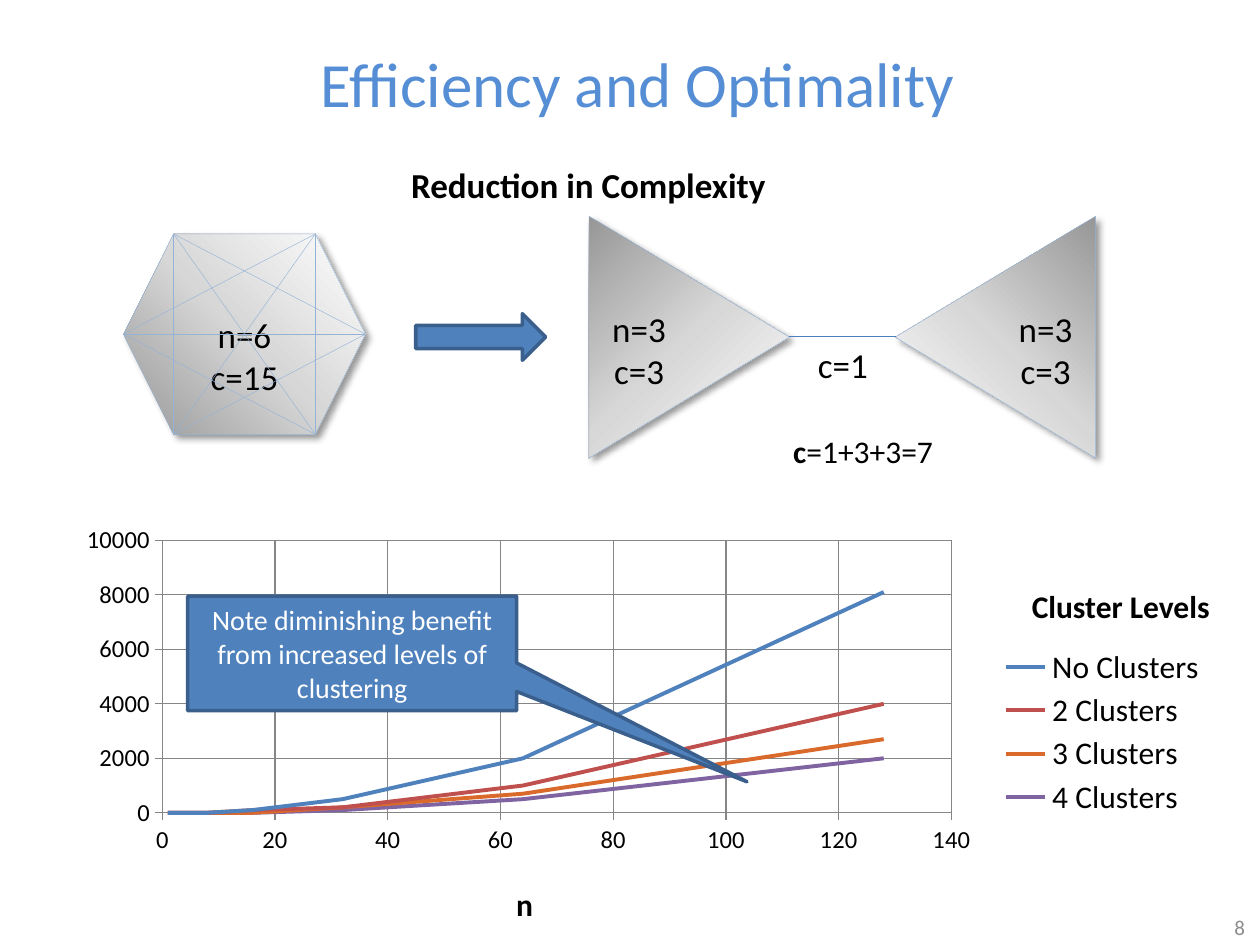
from copy import deepcopy
from dataclasses import dataclass
from itertools import combinations

from lxml import etree
from pptx import Presentation
from pptx.chart.data import XyChartData
from pptx.dml.color import RGBColor
from pptx.enum import chart as ch, shapes, text
from pptx.oxml.ns import qn
from pptx.util import Pt

MSO = shapes.MSO_SHAPE
ALIGN = text.PP_ALIGN
ANCHOR = text.MSO_ANCHOR


@dataclass(frozen=True)
class Theme:
    font: str = "Calibri"
    title: str = "558ED5"
    ink: str = "000000"
    paper: str = "FFFFFF"
    muted: str = "8C8C8C"
    accent: str = "4F81BD"
    accent_edge: str = "3A5F8C"
    link: str = "4B7EBC"
    mesh: str = "95B3D7"
    grid: str = "868686"
    series: tuple = ("4F81BD", "C0504D", "D96A2C", "8064A2")
    shade: tuple = ((0, "979797"), (0.5, "D7D7D7"), (1, "FFFFFF"))
    sz_title: int = 36
    sz_large: int = 20
    sz_body: int = 18
    sz_note: int = 16
    sz_tick: int = 14
    sz_number: int = 12


def rgb(code):
    return RGBColor.from_string(code)


def place(parent, index, inner=False, **fractions):
    """Set a manual layout, in fractions of the chart, on a chart part."""
    old = parent.find(qn("c:layout"))
    if old is not None:
        parent.remove(old)
    layout = etree.Element(qn("c:layout"))
    manual = etree.SubElement(layout, qn("c:manualLayout"))
    values = {"layoutTarget": "inner"} if inner else {}
    values.update(xMode="edge", yMode="edge", **fractions)
    for tag, value in values.items():
        etree.SubElement(manual, qn("c:" + tag)).set("val", str(value))
    parent.insert(index, layout)


class Deck:
    def __init__(self, theme, width, height):
        self.t = theme
        self.prs = Presentation()
        self.prs.slide_width, self.prs.slide_height = Pt(width), Pt(height)
        self.s = self.prs.slides.add_slide(self.prs.slide_layouts[6])

    def style(self, font, size, color, bold=False):
        font.name, font.size, font.bold = self.t.font, Pt(size), bold
        font.color.rgb = rgb(color)

    def set_text(self, tf, lines, size, color, bold, align, anchor):
        tf.vertical_anchor = anchor
        for i, line in enumerate(lines):
            p = tf.add_paragraph() if i else tf.paragraphs[0]
            p.text, p.alignment = line, align
            self.style(p.font, size, color, bold)

    def label(self, box, line, size, color=None, bold=False,
              align=ALIGN.CENTER, anchor=ANCHOR.TOP):
        tf = self.s.shapes.add_textbox(*map(Pt, box)).text_frame
        tf.word_wrap = False
        self.set_text(tf, [line], size, color or self.t.ink, bold, align, anchor)
        return tf

    def block(self, kind, box, fill, edge, weight, lines=(), size=18,
              color=None, anchor=ANCHOR.MIDDLE):
        sp = self.s.shapes.add_shape(kind, *map(Pt, box))
        sp.shadow.inherit = False
        if fill:
            sp.fill.solid()
            sp.fill.fore_color.rgb = rgb(fill)
        sp.line.color.rgb, sp.line.width = rgb(edge), Pt(weight)
        sp.text_frame.word_wrap = True
        self.set_text(sp.text_frame, lines, size, color or self.t.ink, False,
                      ALIGN.CENTER, anchor)
        return sp

    def graph(self, kind, box, lines, rotation=0, vert=None, flip=False):
        """A shaded polygon with a soft shadow, standing for a full graph."""
        sp = self.block(kind, box, None, self.t.mesh, 0.25, lines,
                        self.t.sz_large, anchor=ANCHOR.BOTTOM)
        sp.rotation = rotation
        pr = sp._element.spPr
        if flip:
            pr.find(qn("a:xfrm")).set("flipH", "1")
        if vert:
            sp.text_frame._txBody.find(qn("a:bodyPr")).set("vert", vert)
        sp.fill.gradient()
        sp.fill.gradient_angle = 45
        stops = pr.find(".//" + qn("a:gsLst"))
        stops.append(deepcopy(stops[0]))
        for stop, (position, color) in zip(sp.fill.gradient_stops, self.t.shade):
            stop.position, stop.color.rgb = position, rgb(color)
        shadow = etree.SubElement(
            pr.find(qn("a:effectLst")), qn("a:outerShdw"), blurRad=str(Pt(4)),
            dist=str(Pt(3)), dir="2700000", algn="tl", rotWithShape="0")
        black = etree.SubElement(shadow, qn("a:srgbClr"), val=self.t.ink)
        etree.SubElement(black, qn("a:alpha"), val="40000")

    def line(self, start, end, color, weight):
        c = self.s.shapes.add_connector(
            shapes.MSO_CONNECTOR.STRAIGHT, *map(Pt, (*start, *end)))
        c.line.color.rgb, c.line.width = rgb(color), Pt(weight)
        etree.SubElement(c._element.spPr, qn("a:effectLst"))

    def axis(self, axis, top, step):
        axis.minimum_scale, axis.maximum_scale, axis.major_unit = 0, top, step
        axis.has_major_gridlines = True
        axis.major_tick_mark = ch.XL_TICK_MARK.OUTSIDE
        axis.minor_tick_mark = ch.XL_TICK_MARK.NONE
        for ln in (axis.format.line, axis.major_gridlines.format.line):
            ln.color.rgb, ln.width = rgb(self.t.grid), Pt(0.75)
        self.style(axis.tick_labels.font, self.t.sz_tick, self.t.ink)

    def curves(self, box, xs, series):
        data = XyChartData(number_format="General")
        for name, ys in series.items():
            entry = data.add_series(name)
            for x, y in zip(xs, ys):
                entry.add_data_point(x, y)
        chart = self.s.shapes.add_chart(
            ch.XL_CHART_TYPE.XY_SCATTER_SMOOTH_NO_MARKERS,
            *map(Pt, box), data).chart
        chart.has_title = False
        self.style(chart.font, self.t.sz_body, self.t.ink)
        chart.plots[0].vary_by_categories = False
        for ser, color in zip(chart.plots[0].series, self.t.series):
            ser.smooth = True
            ser.marker.style = ch.XL_MARKER_STYLE.NONE
            ser.format.line.color.rgb = rgb(color)
            ser.format.line.width = Pt(2.25)
        # Axes and the title of the horizontal one
        self.axis(chart.category_axis, 140, 20)
        self.axis(chart.value_axis, 10000, 2000)
        title = chart.category_axis.axis_title
        title.text_frame.text = "n"
        self.style(title.text_frame.paragraphs[0].font, self.t.sz_body,
                   self.t.ink, True)
        place(title._element, 1, x=0.39, y=0.84)
        # Legend and plot area
        chart.has_legend = True
        legend = chart.legend
        legend.position = ch.XL_LEGEND_POSITION.RIGHT
        legend.include_in_layout = False
        self.style(legend.font, self.t.sz_body, self.t.ink)
        place(legend._element, 1, x=0.81, y=0.29, w=0.18, h=0.42)
        plot_area = chart._chartSpace.find(".//" + qn("c:plotArea"))
        place(plot_area, 0, inner=True, x=0.09, y=0.05, w=0.68, h=0.64)


def main():
    t = Theme()
    d = Deck(t, 720, 540)

    # Title and slide number
    d.label((40.3, 10.8, 648, 72), "Efficiency and Optimality", t.sz_title,
            t.title, anchor=ANCHOR.MIDDLE)
    d.label((688.3, 520.5, 30.2, 18), "8", t.sz_number, t.muted,
            align=ALIGN.RIGHT, anchor=ANCHOR.MIDDLE)

    # Connections by number of nodes
    d.curves((33.1, 296.6, 663.1, 243.4), (1, 2, 3, 4, 5, 6, 8, 16, 32, 64, 128), {
        "No Clusters": [0] * 7 + [100, 500, 2000, 8100],
        "2 Clusters": [0] * 7 + [100, 200, 1000, 4000],
        "3 Clusters": [0] * 7 + [0, 200, 700, 2700],
        "4 Clusters": [0] * 7 + [0, 100, 500, 2000],
    })

    # Six nodes, with every diagonal of the hexagon
    x, y, w, h = 70.6, 133.7, 138.2, 114.5
    d.graph(MSO.HEXAGON, (x, y, w, h), ["n=6", "c=15"])
    inset = h / 4
    corners = [(x, y + h / 2), (x + inset, y), (x + w - inset, y),
               (x + w, y + h / 2), (x + w - inset, y + h), (x + inset, y + h)]
    for i, j in combinations(range(6), 2):
        if j - i not in (1, 5):
            d.line(corners[i], corners[j], t.mesh, 0.25)

    # Two linked clusters of three nodes
    d.block(MSO.RIGHT_ARROW, (237.6, 179.3, 74.2, 26.6), t.accent,
            t.accent_edge, 2)
    for left, rotation, vert, flip in ((324.7, 90, "vert270", False),
                                       (499.7, 270, "vert", True)):
        d.graph(MSO.ISOSCELES_TRIANGLE, (left, 135.4, w, h), ["n=3", "c=3"],
                rotation, vert, flip)
    d.line((450.7, 192.5), (511.9, 192.5), t.link, 0.75)
    d.label((457.2, 193, 49, 31.5), "c=1", t.sz_large)
    p = d.label((445.7, 243.4, 95, 29), "c", t.sz_body).paragraphs[0]
    p.font.bold = False
    p.runs[0].font.bold = True
    p.add_run().text = "=1+3+3=7"
    d.label((226.8, 90, 218.9, 31.5), "Reduction in Complexity", t.sz_large,
            bold=True)

    # Chart callout and legend heading
    sp = d.block(MSO.RECTANGULAR_CALLOUT, (107.3, 340.6, 188, 65.5), t.accent,
                 t.accent_edge, 2,
                 ["Note diminishing benefit from increased levels of clustering"],
                 t.sz_note, t.paper)
    sp.adjustments[0], sp.adjustments[1] = 1.2, 1.12
    d.label((582.5, 332, 116.6, 29), "Cluster Levels", t.sz_body, bold=True,
            align=ALIGN.LEFT)

    d.prs.save("out.pptx")


if __name__ == "__main__":
    main()
